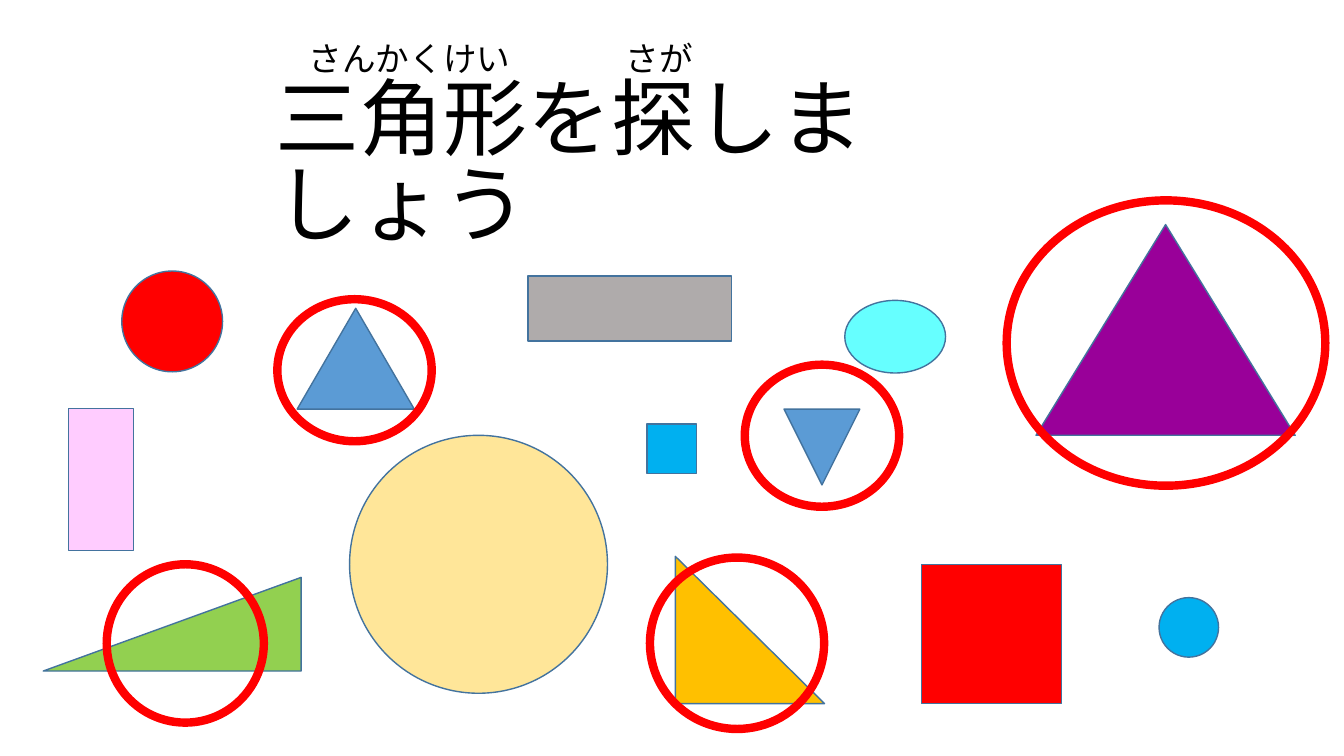
from dataclasses import dataclass

from pptx import Presentation
from pptx.dml.color import RGBColor
from pptx.enum import shapes as sh, text as tx
from pptx.oxml import ns
from pptx.util import Cm, Pt
from lxml import etree

FONT = "Noto Sans CJK JP"
BLACK = RGBColor(0x00, 0x00, 0x00)
RED = RGBColor(0xFF, 0x00, 0x00)
SKY = RGBColor(0x00, 0xB0, 0xF0)
CREAM = RGBColor(0xFF, 0xE6, 0x99)
AQUA = RGBColor(0x66, 0xFF, 0xFF)
BLUE = RGBColor(0x5B, 0x9B, 0xD5)
PURPLE = RGBColor(0x99, 0x00, 0x99)
GREEN = RGBColor(0x92, 0xD0, 0x50)
GOLD = RGBColor(0xFF, 0xC0, 0x00)
GRAY = RGBColor(0xAF, 0xAB, 0xAB)
PINK = RGBColor(0xFF, 0xCC, 0xFF)
EDGE = RGBColor(0x43, 0x73, 0x9E)

KIND = sh.MSO_SHAPE
ALIGN = tx.PP_ALIGN
ANCHOR = tx.MSO_ANCHOR


@dataclass
class Box:
    """Place and size in centimetres."""
    left: float
    top: float
    wide: float
    high: float

    def cm(self) -> list:
        return [Cm(n) for n in (self.left, self.top, self.wide, self.high)]


@dataclass
class Figure:
    kind: KIND
    box: Box
    fill: RGBColor | None = None
    line: RGBColor = EDGE
    width: float = 1
    apex: float | None = None


def ring(*box: float) -> Figure:
    return Figure(KIND.OVAL, Box(*box), line=RED, width=6)


FIGURES = [
    Figure(KIND.OVAL, Box(3.07, 6.83, 2.54, 2.54), RED),
    Figure(KIND.OVAL, Box(29.21, 15.06, 1.5, 1.5), SKY),
    Figure(KIND.OVAL, Box(8.81, 10.97, 6.5, 6.5), CREAM),
    Figure(KIND.OVAL, Box(21.29, 7.57, 2.54, 1.83), AQUA),
    Figure(KIND.ISOSCELES_TRIANGLE, Box(7.49, 7.77, 2.95, 2.54), BLUE),
    Figure(KIND.ISOSCELES_TRIANGLE, Box(26.11, 5.66, 6.53, 5.31), PURPLE),
    Figure(KIND.ISOSCELES_TRIANGLE, Box(1.09, 14.55, 6.5, 2.36), GREEN, apex=1),
    Figure(KIND.RIGHT_TRIANGLE, Box(17.02, 14.02, 3.76, 3.71), GOLD),
    Figure(KIND.FLOWCHART_MERGE, Box(19.76, 10.31, 1.91, 1.91), BLUE),
    Figure(KIND.RECTANGLE, Box(23.22, 14.22, 3.53, 3.51), RED),
    Figure(KIND.RECTANGLE, Box(13.31, 6.96, 5.13, 1.63), GRAY),
    Figure(KIND.RECTANGLE, Box(1.73, 10.29, 1.63, 3.58), PINK),
    Figure(KIND.RECTANGLE, Box(16.31, 10.69, 1.24, 1.24), SKY),
    ring(6.99, 7.54, 3.89, 3.58),
    ring(2.69, 14.22, 3.96, 3.99),
    ring(25.37, 5.05, 8.03, 7.19),
    ring(18.77, 9.19, 3.89, 3.58),
    ring(16.38, 14.05, 4.39, 4.32),
]

RUBY = [
    ("　さんかくけい", Box(5.87, 0.2, 8.05, 1.91)),
    ("　さが", Box(14.38, 0.2, 3.63, 1.91)),
]


def draw(slide, fig: Figure) -> None:
    shape = slide.shapes.add_shape(fig.kind, *fig.box.cm())
    shape.shadow.inherit = False
    if fig.apex is not None:
        shape.adjustments[0] = fig.apex
    if fig.fill is None:
        shape.fill.background()
    else:
        shape.fill.solid()
        shape.fill.fore_color.rgb = fig.fill
    shape.line.color.rgb = fig.line
    shape.line.width = Pt(fig.width)


def write(shape, words: str, size: int, align: ALIGN, anchor: ANCHOR,
          pitch: float) -> None:
    frame = shape.text_frame
    frame.text = words
    frame.word_wrap = True
    frame.auto_size = tx.MSO_AUTO_SIZE.NONE
    frame.vertical_anchor = anchor
    para = frame.paragraphs[0]
    para.alignment = align
    para.line_spacing = pitch
    font = para.runs[0].font
    font.name = FONT
    font.size = Pt(size)
    font.color.rgb = BLACK
    east = etree.Element(ns.qn("a:ea"), typeface=FONT)
    para.runs[0].font._rPr.find(ns.qn("a:latin")).addnext(east)


def main() -> None:
    deck = Presentation()
    deck.slide_width, deck.slide_height = Cm(33.87), Cm(19.05)
    slide = deck.slides.add_slide(deck.slide_layouts[5])
    title = slide.shapes.title
    title.left, title.top, title.width, title.height = Box(
        6.68, 1.91, 19.28, 2.82).cm()
    write(title, "三角形を探しましょう", 60, ALIGN.LEFT, ANCHOR.TOP, 0.85)
    for fig in FIGURES:
        draw(slide, fig)
    for words, box in RUBY:
        note = slide.shapes.add_textbox(*box.cm())
        write(note, words, 24, ALIGN.CENTER, ANCHOR.BOTTOM, 0.9)
    deck.save("out.pptx")


if __name__ == "__main__":
    main()
